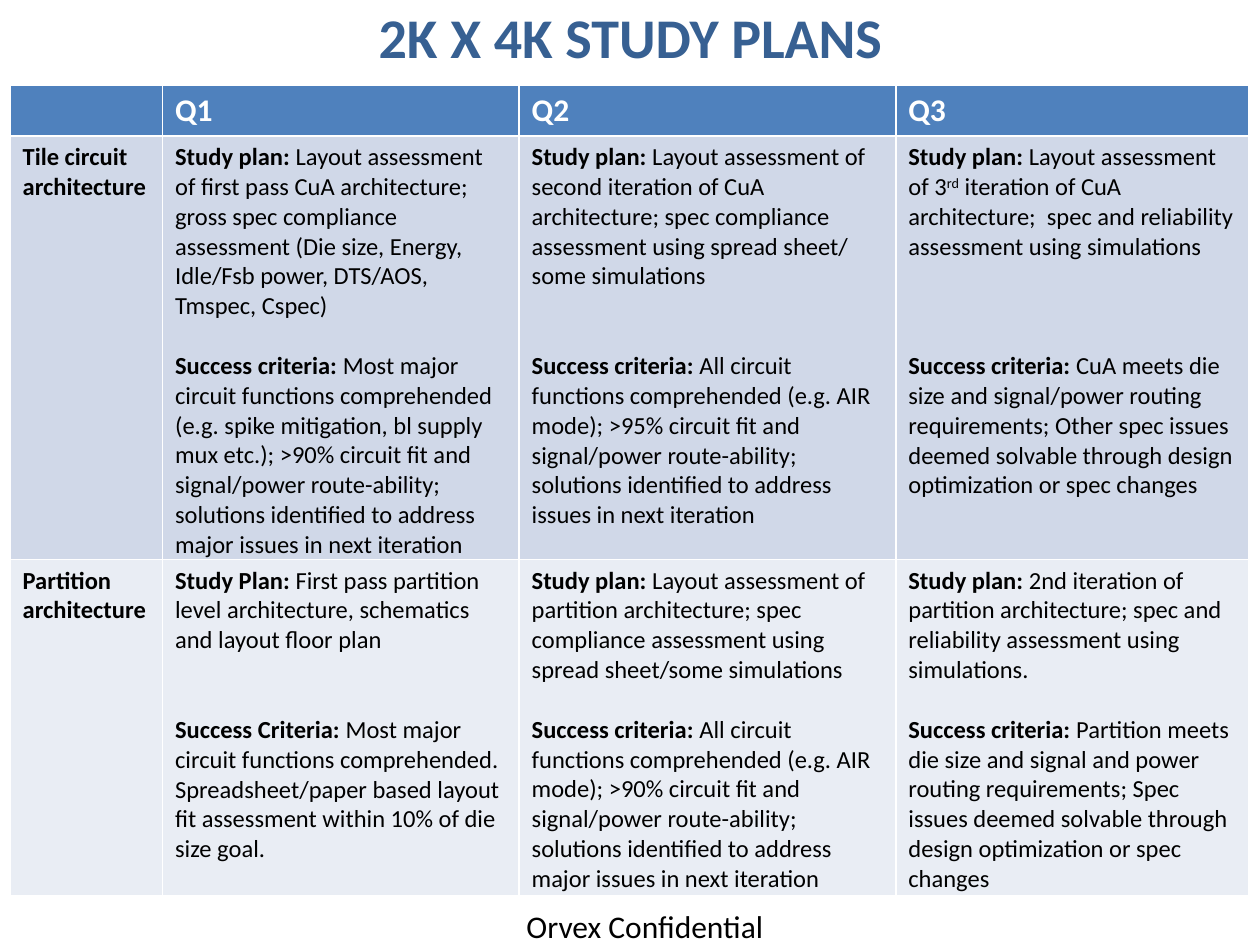
from pptx import Presentation
from pptx import util as u
from pptx.dml.color import RGBColor
from pptx.enum import text

TITLE_BLUE = RGBColor(0x37, 0x60, 0x92)
HEADER_BLUE = RGBColor(0x4F, 0x81, 0xBD)
TILE_FILL = RGBColor(0xD0, 0xD8, 0xE8)
PARTITION_FILL = RGBColor(0xE9, 0xED, 0xF4)
WHITE = RGBColor(0xFF, 0xFF, 0xFF)
BLACK = RGBColor(0x00, 0x00, 0x00)

FONT = "Calibri"
BODY_SIZE = 14
LINE_HEIGHT = 17.08  # points taken by one line of body text
COLUMN_WIDTHS = [1.21, 2.83, 2.99, 2.8]
ROW_HEIGHTS = [0.4, 3.36, 2.67]
QUARTERS = ["", "Q1", "Q2", "Q3"]

# Row name, fill, then per quarter: (label, words) twice and the gap in lines.
# Words between ^ marks are superscript.
STUDIES = [
    ("Tile circuit architecture", TILE_FILL, [
        (("Study plan: ", "Layout assessment of first pass CuA architecture; gross spec "
          "compliance assessment (Die size, Energy, Idle/Fsb power, DTS/AOS, Tmspec, Cspec)"),
         ("Success criteria: ", "Most major circuit functions comprehended (e.g. spike "
          "mitigation, bl supply mux etc.); >90% circuit fit and signal/power route-ability; "
          "solutions identified to address major issues in next iteration"), 1),
        (("Study plan: ", "Layout assessment of second iteration of CuA architecture; spec "
          "compliance assessment using spread sheet/ some simulations"),
         ("Success criteria: ", "All circuit functions comprehended (e.g. AIR mode); >95% "
          "circuit fit and signal/power route-ability; solutions identified to address "
          "issues in next iteration"), 2),
        (("Study plan: ", "Layout assessment of 3^rd^ iteration of CuA architecture;  spec "
          "and reliability assessment using simulations"),
         ("Success criteria: ", "CuA meets die size and signal/power routing requirements; "
          "Other spec issues deemed solvable through design optimization or spec changes"), 3),
    ]),
    ("Partition architecture", PARTITION_FILL, [
        (("Study Plan: ", "First pass partition level architecture, schematics and layout "
          "floor plan"),
         ("Success Criteria: ", "Most major circuit functions comprehended. "
          "Spreadsheet/paper based layout fit assessment within 10% of die size goal."), 2),
        (("Study plan: ", "Layout assessment of partition architecture; spec compliance "
          "assessment using spread sheet/some simulations"),
         ("Success criteria: ", "All circuit functions comprehended (e.g. AIR mode); >90% "
          "circuit fit and signal/power route-ability; solutions identified to address "
          "major issues in next iteration"), 1),
        (("Study plan: ", "2nd iteration of partition architecture; spec and reliability "
          "assessment using simulations."),
         ("Success criteria: ", "Partition meets die size and signal and power routing "
          "requirements; Spec issues deemed solvable through design optimization or spec "
          "changes"), 1),
    ]),
]


def add_span(para, words, size, color=BLACK, bold=False):
    span = para.add_run()
    span.text = words
    font = span.font
    font.name, font.size, font.bold = FONT, u.Pt(size), bold
    font.color.rgb = color
    return span


def add_title(page, words):
    title = page.shapes.title
    title.left, title.top = u.Inches(0.22), u.Inches(-0.02)
    title.width, title.height = u.Inches(9.57), u.Inches(0.61)
    frame = title.text_frame
    frame.vertical_anchor = text.MSO_ANCHOR.MIDDLE
    frame.paragraphs[0].alignment = text.PP_ALIGN.CENTER
    add_span(frame.paragraphs[0], words, 32, TITLE_BLUE, True)


def add_footer(page, words):
    box = page.shapes.add_textbox(u.Inches(4.08), u.Inches(7.15),
                                  u.Inches(2.61), u.Inches(0.4))
    box.text_frame.word_wrap = True
    add_span(box.text_frame.paragraphs[0], words, 18)


def fill_cell(cell, color):
    cell.fill.solid()
    cell.fill.fore_color.rgb = color


def write_entry(para, label, words):
    add_span(para, label, BODY_SIZE, bold=True)
    for index, part in enumerate(words.split("^")):
        span = add_span(para, part, BODY_SIZE)
        if index % 2:
            span._r.get_or_add_rPr().set("baseline", "30000")


def write_study(cell, plan, criteria, gap):
    frame = cell.text_frame
    write_entry(frame.paragraphs[0], *plan)
    para = frame.add_paragraph()
    para.space_before = u.Pt(round(gap * LINE_HEIGHT, 1))
    write_entry(para, *criteria)


def add_study_table(page):
    # The default table style supplies the white cell borders
    table = page.shapes.add_table(
        len(ROW_HEIGHTS), len(COLUMN_WIDTHS), u.Inches(0.08), u.Inches(0.68),
        u.Inches(sum(COLUMN_WIDTHS)), u.Inches(sum(ROW_HEIGHTS))).table
    for column, width in zip(table.columns, COLUMN_WIDTHS):
        column.width = u.Inches(width)
    for row, height in zip(table.rows, ROW_HEIGHTS):
        row.height = u.Inches(height)

    # Header row
    for cell, quarter in zip(table.rows[0].cells, QUARTERS):
        fill_cell(cell, HEADER_BLUE)
        if quarter:
            add_span(cell.text_frame.paragraphs[0], quarter, 18, WHITE, True)

    # Study rows
    for row_index, (name, color, studies) in enumerate(STUDIES, start=1):
        cells = list(table.rows[row_index].cells)
        for cell in cells:
            fill_cell(cell, color)
            cell.margin_bottom = 0
        add_span(cells[0].text_frame.paragraphs[0], name, BODY_SIZE, bold=True)
        for cell, study in zip(cells[1:], studies):
            write_study(cell, *study)


def main():
    deck = Presentation()
    deck.slide_width, deck.slide_height = u.Inches(10), u.Inches(7.5)
    page = deck.slides.add_slide(deck.slide_layouts.get_by_name("Title Only"))
    add_title(page, "2K X 4K STUDY PLANS")
    add_footer(page, "Orvex Confidential")
    add_study_table(page)
    deck.save("out.pptx")


if __name__ == "__main__":
    main()
